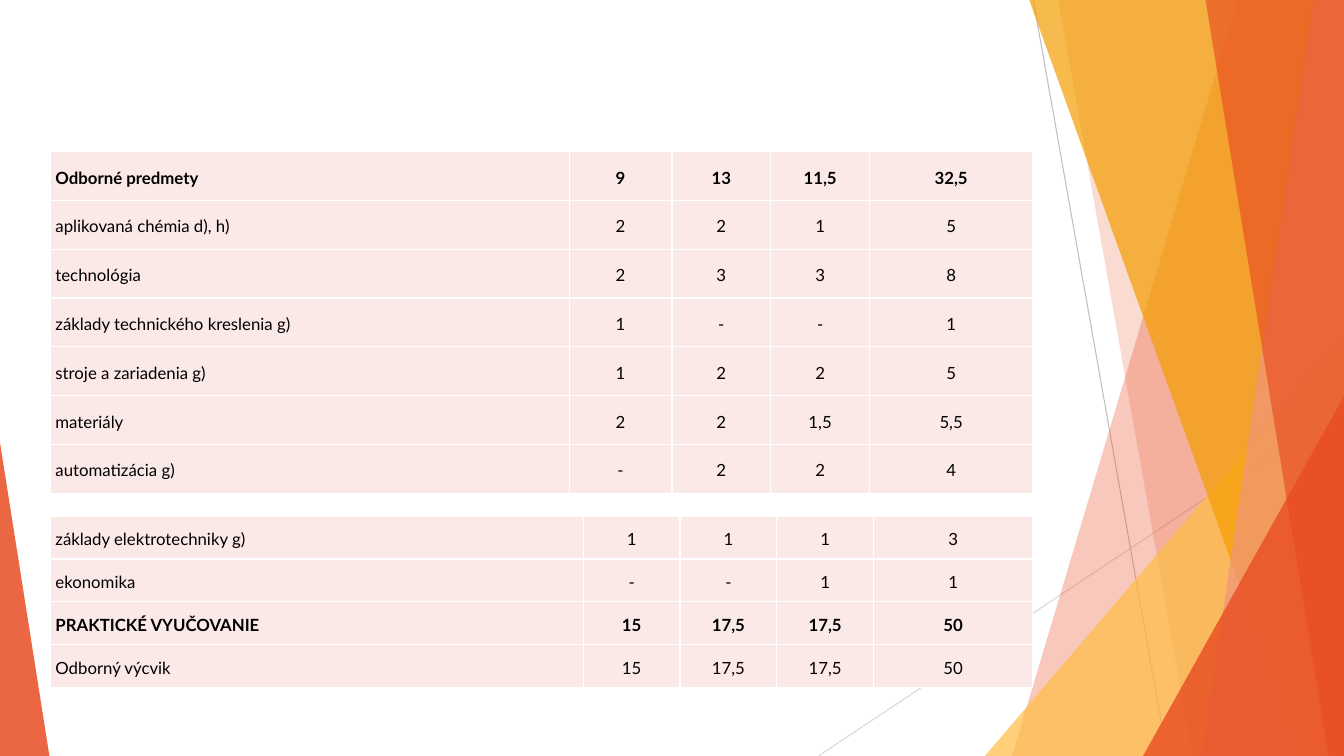
import pptx
import pptx.util
import pptx.dml.color
import pptx.enum.shapes
import pptx.enum.text
import pptx.oxml.ns
import lxml.etree

WIDTH = pptx.util.Inches(13.333)
HEIGHT = pptx.util.Inches(7.5)
FONT = "Lato"
COLORS = {
    "red": "E84C22",
    "salmon": "F1947A",
    "amber": "F49D00",
    "yellow": "FFBD47",
    "cell": "FBE9E8",
    "border": "FFFFFF",
    "text": "000000",
    "steep": "BFBFBF",
    "flat": "D9D9D9",
}
SUBJECTS = [
    ("Odborné predmety", "9", "13", "11,5", "32,5"),
    ("aplikovaná chémia d), h)", "2", "2", "1", "5"),
    ("technológia", "2", "3", "3", "8"),
    ("základy technického kreslenia g)", "1", "-", "-", "1"),
    ("stroje a zariadenia g)", "1", "2", "2", "5"),
    ("materiály", "2", "2", "1,5", "5,5"),
    ("automatizácia g)", "-", "2", "2", "4"),
]
PRACTICE = [
    ("základy elektrotechniky g)", "1", "1", "1", "3"),
    ("ekonomika", "-", "-", "1", "1"),
    ("PRAKTICKÉ VYUČOVANIE", "15", "17,5", "17,5", "50"),
    ("Odborný výcvik", "15", "17,5", "17,5", "50"),
]
HEADINGS = {"Odborné predmety", "PRAKTICKÉ VYUČOVANIE"}


def across(percent):
    """Return a percentage of the slide width."""
    return pptx.util.Emu(round(WIDTH * percent / 100))


def down(percent):
    """Return a percentage of the slide height."""
    return pptx.util.Emu(round(HEIGHT * percent / 100))


def rgb(name):
    """Return a palette colour."""
    return pptx.dml.color.RGBColor.from_string(COLORS[name])


def child(parent, tag, **attrs):
    """Append a DrawingML element."""
    return lxml.etree.SubElement(parent, pptx.oxml.ns.qn(tag), attrs)


def paint(sp, color, opacity):
    """Give a shape a translucent fill without line or shadow."""
    sp.shadow.inherit = False
    sp.line.fill.background()
    sp.fill.solid()
    sp.fill.fore_color.rgb = rgb(color)
    srgb = sp.fill._xPr.find(".//" + pptx.oxml.ns.qn("a:srgbClr"))
    child(srgb, "a:alpha", val=str(opacity * 1000))


def add_wedge(s, top, bottom, color, opacity):
    """Fill the slide from a slanted edge to its right side."""
    builder = s.shapes.build_freeform(across(top), 0)
    corners = [(WIDTH, 0), (WIDTH, HEIGHT), (across(bottom), HEIGHT)]
    builder.add_line_segments(corners, close=True)
    paint(builder.convert_to_shape(), color, opacity)


def add_triangle(s, left, top, width, apex, color, opacity):
    """Add a triangle standing on the bottom edge of the slide."""
    kind = pptx.enum.shapes.MSO_SHAPE.ISOSCELES_TRIANGLE
    sp = s.shapes.add_shape(kind, across(left), down(top), across(width), down(100 - top))
    sp.adjustments[0] = apex
    paint(sp, color, opacity)


def add_line(s, x1, y1, x2, y2, color):
    """Add a thin straight line."""
    kind = pptx.enum.shapes.MSO_CONNECTOR.STRAIGHT
    line = s.shapes.add_connector(kind, across(x1), down(y1), across(x2), down(y2))
    line.line.color.rgb = rgb(color)
    line.line.width = pptx.util.Pt(0.75)
    child(line._element.spPr, "a:effectLst")


def style_cell(cell):
    """Set the borders, fill, margins and anchor of a cell."""
    tc_pr = cell._tc.get_or_add_tcPr()
    for side in "LRTB":
        ln = child(tc_pr, "a:ln" + side, w=str(pptx.util.Pt(1)))
        child(child(ln, "a:solidFill"), "a:srgbClr", val=COLORS["border"])
    cell.fill.solid()
    cell.fill.fore_color.rgb = rgb("cell")
    cell.margin_left = cell.margin_right = pptx.util.Inches(0.05)
    cell.margin_top = cell.margin_bottom = 0
    cell.vertical_anchor = pptx.enum.text.MSO_ANCHOR.MIDDLE


def write_cell(cell, text, bold, align):
    """Write one run of text into a cell."""
    p = cell.text_frame.paragraphs[0]
    p.alignment = align
    p.line_spacing = 1.15
    p.space_after = pptx.util.Pt(10)
    r = p.add_run()
    r.text = text
    r.font.name = FONT
    r.font.size = pptx.util.Pt(12)
    r.font.bold = bold
    r.font.color.rgb = rgb("text")


def add_hours_table(s, top, widths, row_height, rows):
    """Add a table of subjects with their weekly hours."""
    frame = s.shapes.add_table(
        len(rows), len(widths), across(3.75), down(top),
        across(sum(widths)), down(row_height * len(rows)))
    table = frame.table
    table.first_row = table.horz_banding = False
    for column, width in zip(table.columns, widths):
        column.width = across(width)
    for i, values in enumerate(rows):
        table.rows[i].height = down(row_height)
        for j, text in enumerate(values):
            align = pptx.enum.text.PP_ALIGN.CENTER if j else pptx.enum.text.PP_ALIGN.LEFT
            style_cell(table.cell(i, j))
            write_cell(table.cell(i, j), text, values[0] in HEADINGS, align)


def add_decoration(s):
    """Add the translucent facets and thin lines."""
    add_line(s, 76.88, 0, 86.85, 100, "steep")
    add_line(s, 100, 53.73, 60.9, 100, "flat")
    add_wedge(s, 92.1, 75.3, "red", 30)
    add_wedge(s, 78.75, 88.73, "red", 20)
    add_triangle(s, 73.28, 44.4, 26.72, 1, "yellow", 72)
    add_wedge(s, 76.58, 96.83, "amber", 70)
    add_wedge(s, 97.73, 89.4, "salmon", 70)
    add_wedge(s, 89.7, 98.85, "red", 65)
    add_triangle(s, 85.05, 52.4, 14.95, 1, "red", 80)
    add_triangle(s, 0, 58.53, 3.68, 0, "red", 85)


def main():
    """Build and save the slide."""
    prs = pptx.Presentation()
    prs.slide_width, prs.slide_height = WIDTH, HEIGHT
    s = prs.slides.add_slide(prs.slide_layouts[6])
    add_decoration(s)
    add_hours_table(s, 20.05, [38.6, 7.65, 7.35, 7.35, 12.15], 6.46, SUBJECTS)
    add_hours_table(s, 68.27, [39.65, 7.2, 7.2, 7.2, 11.85], 5.67, PRACTICE)
    prs.save("out.pptx")


if __name__ == "__main__":
    main()
